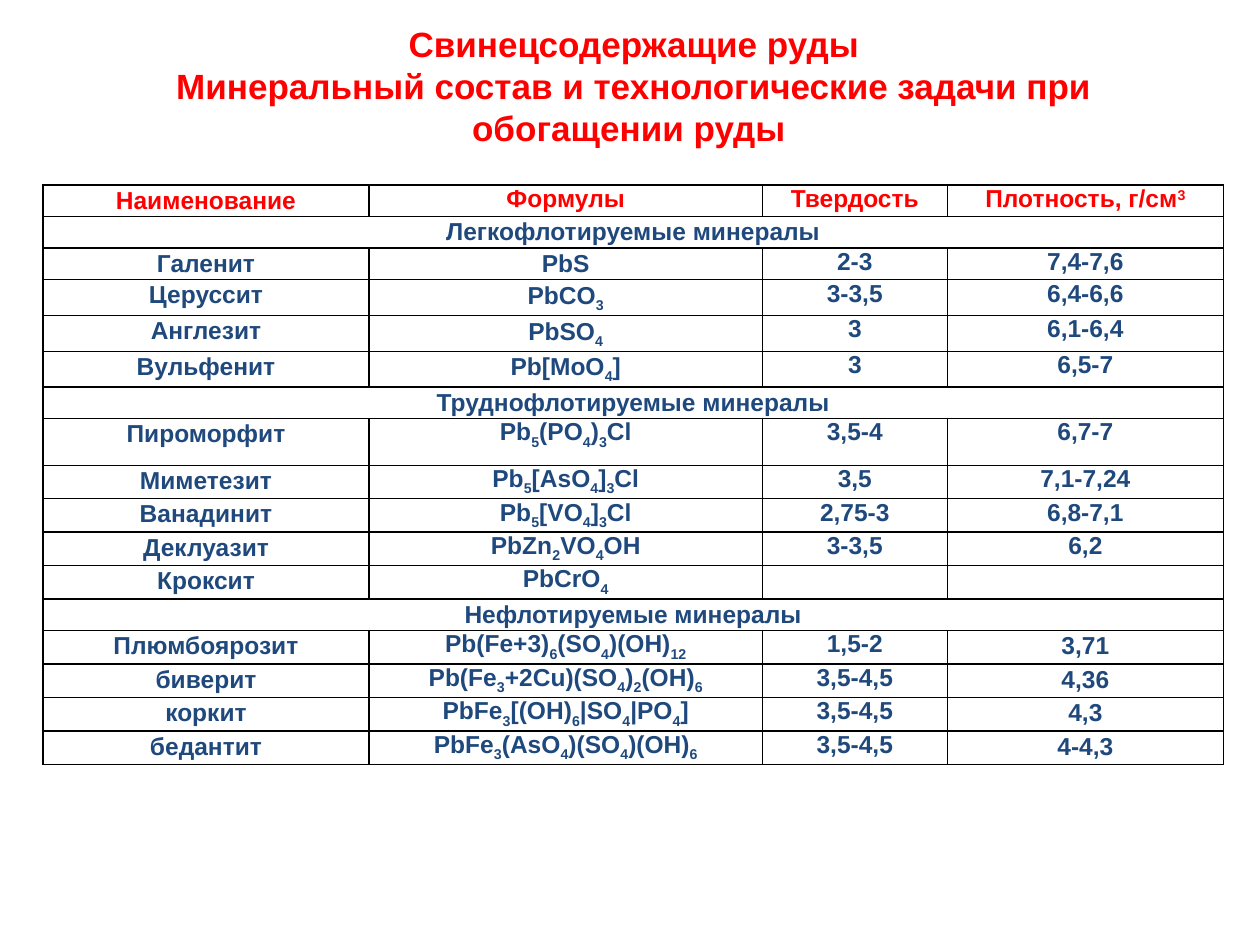
import itertools

import pptx
import pptx.dml.color
import pptx.enum.text
import pptx.oxml
import pptx.oxml.ns
import pptx.util

INCH = pptx.util.Inches
COLORS = {"head": "FF0000", "body": "1F497D", "line": "000000"}
FONT = "Arial"
COLS = [2.59, 3.12, 1.47, 2.19]
ROWS = [0.22, 0.22, 0.25, 0.23, 0.22, 0.22, 0.22, 0.37, 0.25,
        0.18, 0.1, 0.22, 0.22, 0.25, 0.25, 0.25, 0.25]
TITLE = ["Свинецсодержащие руды",
         "Минеральный состав и технологические задачи при обогащении руды "]
HEADS = ["Наименование", "Формулы", "Твердость", "Плотность, г/см3"]

# Each group: heading, columns with loose line spacing, minerals
GROUPS = [
    ("Легкофлотируемые минералы", (0, 1), [
        ("Галенит", "PbS", "2-3", "7,4-7,6"),
        ("Церуссит", "PbCO3", "3-3,5", "6,4-6,6"),
        ("Англезит", "PbSO4", "3", "6,1-6,4"),
        ("Вульфенит", "Pb[MoO4]", "3", "6,5-7"),
    ]),
    ("Труднофлотируемые минералы", (0,), [
        ("Пироморфит", "Pb5(PO4)3Cl", "3,5-4", "6,7-7"),
        ("Миметезит", "Pb5[AsO4]3Cl", "3,5", "7,1-7,24"),
        ("Ванадинит", "Pb5[VO4]3Cl", "2,75-3", "6,8-7,1"),
        ("Деклуазит", "PbZn2VO4OH", "3-3,5", "6,2"),
        ("Кроксит", "PbCrО4", "", ""),
    ]),
    ("Нефлотируемые минералы", (0, 3), [
        ("Плюмбоярозит", "Pb(Fe+3)6(SO4)(OH)12", "1,5-2", "3,71"),
        ("биверит", "Pb(Fe3+2Cu)(SO4)2(OH)6", "3,5-4,5", "4,36"),
        ("коркит", "PbFe3[(OH)6|SO4|PO4]", "3,5-4,5", "4,3"),
        ("бедантит", "PbFe3(AsO4)(SO4)(OH)6", "3,5-4,5", "4-4,3"),
    ]),
]


def style(para, size, color):
    para.alignment = pptx.enum.text.PP_ALIGN.CENTER
    font = para.font
    font.name, font.size, font.bold = FONT, pptx.util.Pt(size), True
    font.color.rgb = pptx.dml.color.RGBColor.from_string(COLORS[color])


def add_runs(para, text, shift):
    """Raise or lower digits by shift percent, except those after a plus."""
    last = ""
    for digit, chars in itertools.groupby(text, str.isdigit):
        run = para.add_run()
        run.text = "".join(chars)
        if digit and last != "+":
            run.font._element.set("baseline", str(shift * 1000))
        last = run.text[-1]


def add_lines(cell):
    props = cell._tc.get_or_add_tcPr()
    for side in "LRTB":
        props.append(pptx.oxml.parse_xml(
            f'<a:ln{side} {pptx.oxml.ns.nsdecls("a")} w="12700"><a:solidFill>'
            f'<a:srgbClr val="{COLORS["line"]}"/></a:solidFill></a:ln{side}>'))


def fill_cell(cell, text, color="body", loose=False, shift=0):
    add_lines(cell)
    cell.fill.background()
    cell.margin_left = cell.margin_right = INCH(0.05)
    cell.margin_top = cell.margin_bottom = 0
    para = cell.text_frame.paragraphs[0]
    if loose:
        para.line_spacing = 1.07
        para.space_after = pptx.util.Pt(8)
    style(para, 14, color)
    if shift:
        add_runs(para, text, shift)
    elif text:
        para.add_run().text = text
    if not text:
        para._p.append(pptx.oxml.parse_xml(
            f'<a:endParaRPr {pptx.oxml.ns.nsdecls("a")} sz="1400"/>'))


def fill_band(table, row, text):
    """Fill a row that is one cell across all columns."""
    for col in range(len(COLS)):
        fill_cell(table.cell(row, col), "" if col else text, loose=True)
    table.cell(row, 0).merge(table.cell(row, len(COLS) - 1))


def add_title(slide):
    title = slide.shapes.title
    title.left, title.top = INCH(0.5), INCH(0.13)
    title.width, title.height = INCH(9.06), INCH(1.11)
    frame = title.text_frame
    frame.text = "\n".join(TITLE)
    frame.vertical_anchor = pptx.enum.text.MSO_ANCHOR.TOP
    frame.auto_size = pptx.enum.text.MSO_AUTO_SIZE.SHAPE_TO_FIT_TEXT
    for para in frame.paragraphs:
        style(para, 20, "head")


def add_grid(slide):
    table = slide.shapes.add_table(
        len(ROWS), len(COLS), INCH(0.34), INCH(1.47),
        INCH(sum(COLS)), INCH(sum(ROWS))).table
    table.first_row = table.horz_banding = False
    for col, width in zip(table.columns, COLS):
        col.width = INCH(width)
    for row, height in zip(table.rows, ROWS):
        row.height = INCH(height)

    for col, text in enumerate(HEADS):
        fill_cell(table.cell(0, col), text, "head", col == 0,
                  30 if col == 3 else 0)
    count = itertools.count(1)
    for name, loose, items in GROUPS:
        fill_band(table, next(count), name)
        for item in items:
            row = next(count)
            for col, text in enumerate(item):
                fill_cell(table.cell(row, col), text, loose=col in loose,
                          shift=-25 if col == 1 else 0)


def main():
    deck = pptx.Presentation()
    deck.slide_width, deck.slide_height = INCH(10), INCH(7.5)
    slide = deck.slides.add_slide(deck.slide_layouts[5])
    add_title(slide)
    add_grid(slide)
    deck.save("out.pptx")


if __name__ == "__main__":
    main()
